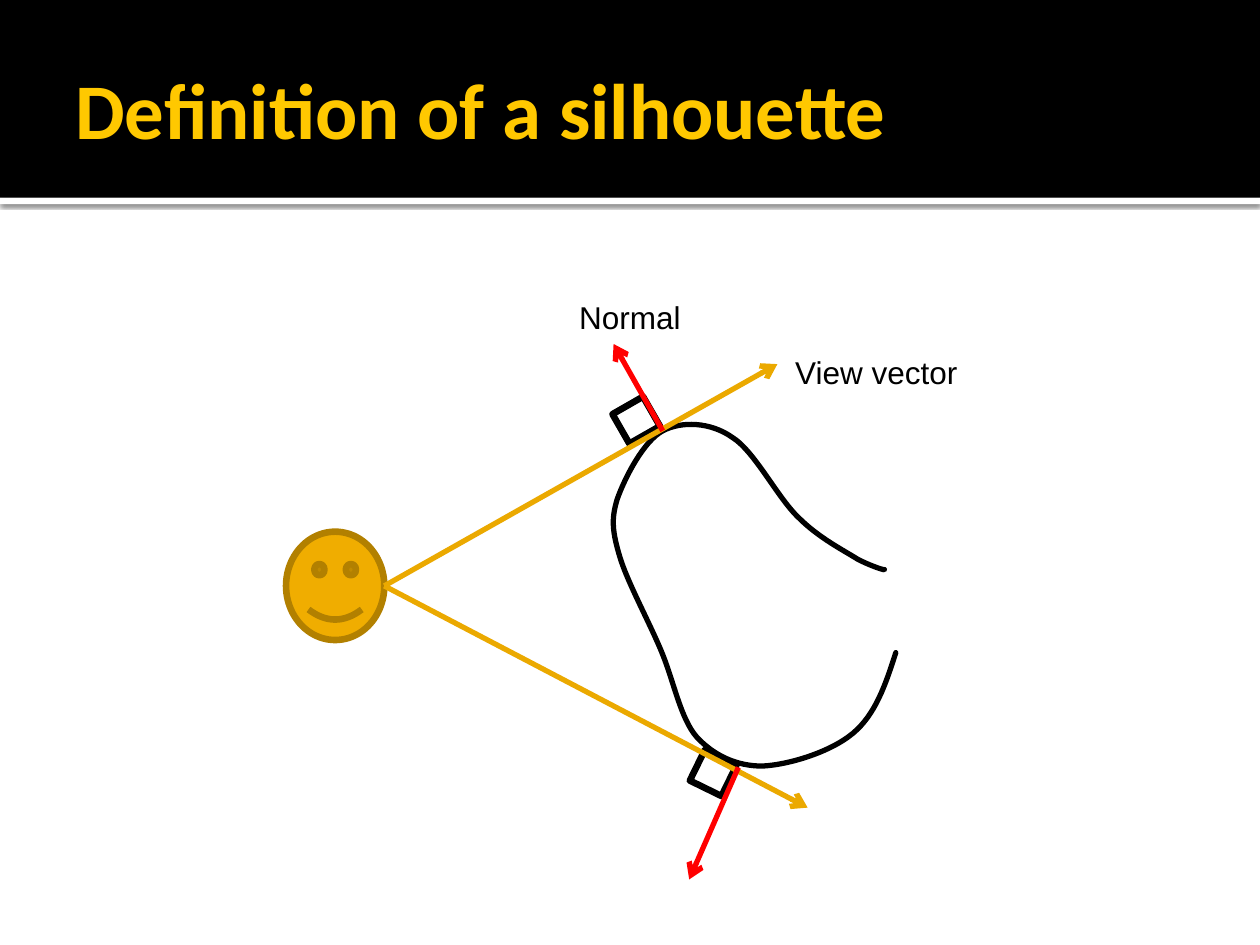
from typing import NamedTuple

from lxml.etree import SubElement
from pptx import Presentation
from pptx.dml.color import RGBColor
from pptx.enum.shapes import MSO_CONNECTOR, MSO_SHAPE
from pptx.enum.text import MSO_ANCHOR, PP_ALIGN
from pptx.oxml.ns import qn
from pptx.util import Inches, Pt

BLACK, WHITE, RED = "000000", "FFFFFF", "FF0000"
GOLD, AMBER, BROWN, YELLOW = "EBA900", "F0AD00", "B28000", "FFC800"


class Point(NamedTuple):
    x: float
    y: float


class Box(NamedTuple):
    left: float
    top: float
    width: float
    height: float


class Arrow(NamedTuple):
    start: Point
    end: Point
    color: str


class RightAngle(NamedTuple):
    box: Box
    rotation: float


class Label(NamedTuple):
    text: str
    box: Box


EYE = Point(3.05, 4.65)
ARROWS = [
    Arrow(EYE, Point(6.17, 2.89), GOLD),
    Arrow(EYE, Point(6.41, 6.41), GOLD),
    Arrow(Point(5.26, 3.42), Point(4.87, 2.73), RED),
    Arrow(Point(5.86, 6.09), Point(5.47, 6.98), RED),
]
RIGHT_ANGLES = [
    RightAngle(Box(5.52, 6, 0.28, 0.27), 206.1),
    RightAngle(Box(4.91, 3.2, 0.28, 0.27), 330.2),
]
LABELS = [
    Label("View vector", Box(6.17, 2.75, 1.57, 0.4)),
    Label("Normal", Box(4.28, 2.32, 1.44, 0.4)),
]
# Bezier chain: a start point, then two control points and an end point per curve
OUTLINE = [Point(*xy) for xy in [
    (7.11, 5.18),
    (7.03, 5.43), (6.95, 5.67), (6.77, 5.82),
    (6.59, 5.97), (6.26, 6.07), (6.05, 6.08),
    (5.85, 6.08), (5.67, 6.00), (5.53, 5.85),
    (5.40, 5.70), (5.35, 5.41), (5.25, 5.17),
    (5.15, 4.93), (4.98, 4.62), (4.92, 4.42),
    (4.86, 4.22), (4.85, 4.12), (4.90, 3.96),
    (4.96, 3.79), (5.11, 3.50), (5.26, 3.42),
    (5.41, 3.34), (5.64, 3.35), (5.81, 3.47),
    (5.99, 3.58), (6.17, 3.95), (6.34, 4.11),
    (6.50, 4.27), (6.70, 4.37), (6.81, 4.44),
    (6.93, 4.50), (7.03, 4.53), (7.02, 4.52),
]]


def rgb(color: str) -> RGBColor:
    return RGBColor.from_string(color)


def emu(lengths) -> list:
    return [Inches(v) for v in lengths]


def set_line(sp, color: str, width: float) -> None:
    sp.line.color.rgb = rgb(color)
    sp.line.width = Pt(width)


def add_shape(s, kind, box: Box, fill: str, line: str = "", rotation: float = 0):
    sp = s.shapes.add_shape(kind, *emu(box))
    sp.shadow.inherit = False
    sp.fill.solid()
    sp.fill.fore_color.rgb = rgb(fill)
    sp.rotation = rotation
    if line:
        set_line(sp, line, 3.78)
    else:
        sp.line.fill.background()
    return sp


def add_drop_shadow(sp) -> None:
    effects = sp._element.spPr.find(qn("a:effectLst"))
    shadow = SubElement(effects, qn("a:outerShdw"), blurRad=str(Pt(2.5)),
                        dist=str(Pt(0.8)), dir="5400000", algn="tl", rotWithShape="0")
    color = SubElement(shadow, qn("a:srgbClr"), val=BLACK)
    SubElement(color, qn("a:alpha"), val="60000")


def add_text(s, text: str, box: Box, *, size: float, font: str, color: str,
             bold: bool = False, align=PP_ALIGN.LEFT, anchor=MSO_ANCHOR.TOP,
             right_inset: float = 0.1) -> None:
    tf = s.shapes.add_textbox(*emu(box)).text_frame
    tf.word_wrap = True
    tf.vertical_anchor = anchor
    tf.margin_right = Inches(right_inset)
    p = tf.paragraphs[0]
    p.alignment = align
    r = p.add_run()
    r.text = text
    r.font.size, r.font.name, r.font.bold = Pt(size), font, bold
    r.font.color.rgb = rgb(color)


def add_arrow(s, arrow: Arrow) -> None:
    sp = s.shapes.add_connector(MSO_CONNECTOR.STRAIGHT, *emu(arrow.start + arrow.end))
    set_line(sp, arrow.color, 3)
    SubElement(sp.line._get_or_add_ln(), qn("a:tailEnd"), type="arrow")
    SubElement(sp._element.spPr, qn("a:effectLst"))


def add_curve(s, points: list[Point]) -> None:
    """Draw an open chain of Bezier curves, turning every three segments into one curve."""
    builder = s.shapes.build_freeform(*emu(points[0]))
    builder.add_line_segments([emu(pt) for pt in points[1:]], close=False)
    sp = builder.convert_to_shape()
    outline = next(sp._element.iter(qn("a:path")))
    segments = outline.findall(qn("a:lnTo"))
    for i in range(0, len(segments), 3):
        curve = SubElement(outline, qn("a:cubicBezTo"))
        for segment in segments[i:i + 3]:
            curve.append(segment[0])
            outline.remove(segment)
    sp.shadow.inherit = False
    sp.fill.background()
    set_line(sp, BLACK, 3)
    ln = sp.line._get_or_add_ln()
    ln.set("cap", "rnd")
    SubElement(ln, qn("a:round"))


def main() -> None:
    prs = Presentation()
    prs.slide_width, prs.slide_height = Inches(10), Inches(7.5)
    s = prs.slides.add_slide(prs.slide_layouts[6])

    add_drop_shadow(add_shape(s, MSO_SHAPE.RECTANGLE, Box(0, 1.57, 10, 0.05), WHITE))
    add_shape(s, MSO_SHAPE.RECTANGLE, Box(0, 0, 10, 1.57), BLACK)
    for mark in RIGHT_ANGLES:
        add_shape(s, MSO_SHAPE.RECTANGLE, mark.box, WHITE, BLACK, mark.rotation)
    add_text(s, "Definition of a silhouette", Box(0.5, 0.17, 9, 1.37), size=45,
             font="Calibri", color=YELLOW, bold=True, anchor=MSO_ANCHOR.MIDDLE,
             right_inset=0.05)
    add_shape(s, MSO_SHAPE.SMILEY_FACE, Box(2.27, 4.22, 0.78, 0.86), AMBER, BROWN)
    add_curve(s, OUTLINE)
    for arrow in ARROWS:
        add_arrow(s, arrow)
    for label in LABELS:
        add_text(s, label.text, label.box, size=18, font="Arial", color=BLACK,
                 align=PP_ALIGN.CENTER)
    prs.save("out.pptx")


if __name__ == "__main__":
    main()
